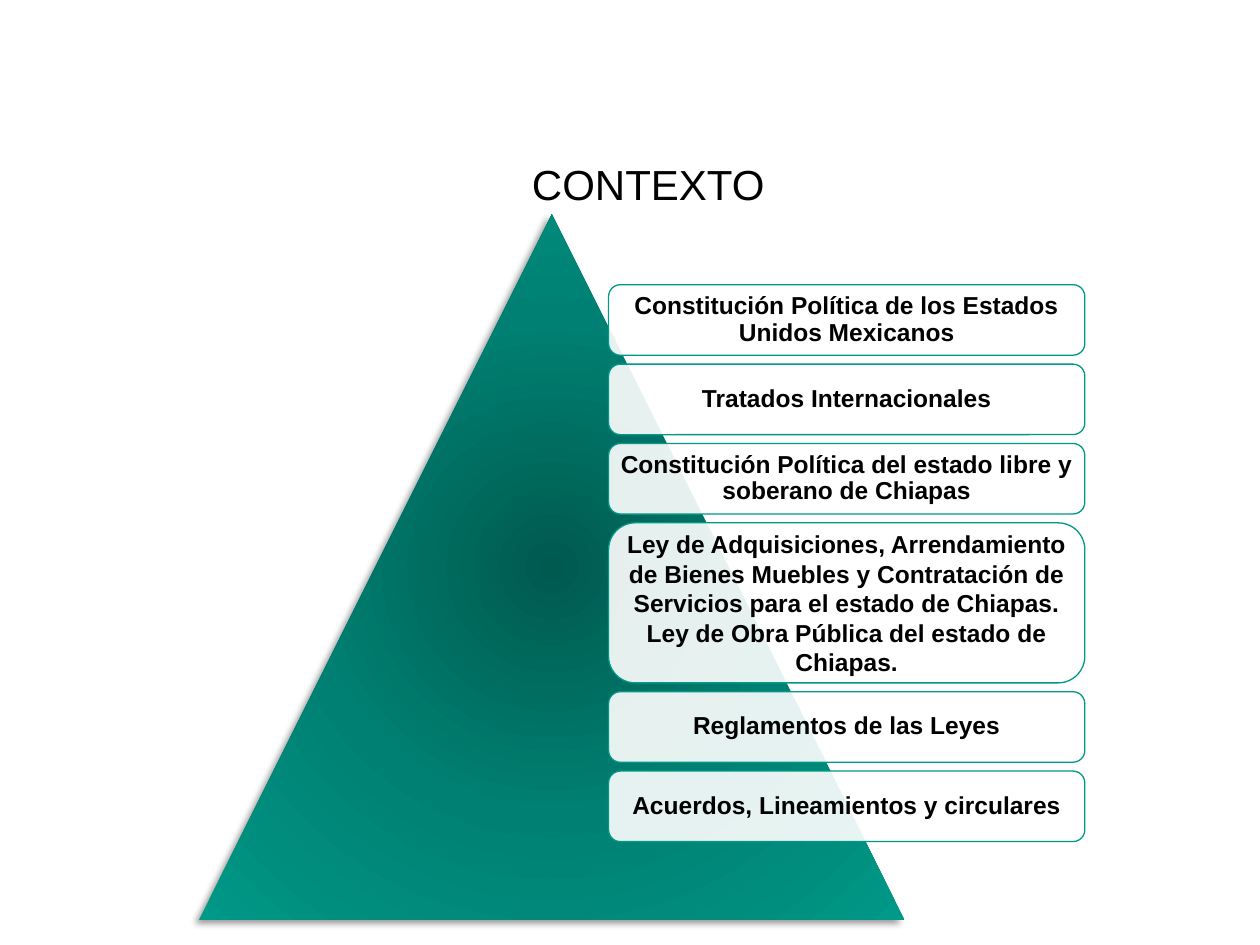
from lxml.etree import SubElement
from pptx import Presentation
from pptx.dml.color import RGBColor
from pptx.enum.shapes import MSO_SHAPE as Shape
from pptx.enum.text import MSO_ANCHOR as Anchor, PP_ALIGN as Align
from pptx.oxml.ns import qn
from pptx.util import Inches, Pt

COLORS = {
    "text": "000000",
    "box": "FFFFFF",
    "line": "009887",
    "core": "005A50",
    "middle": "008072",
    "edge": "009887",
    "shadow": "000000",
}

LEVELS = [
    (5.6, ["Constitución Política de los Estados Unidos Mexicanos"]),
    (5.6, ["Tratados Internacionales"]),
    (5.6, ["Constitución Política del estado libre y soberano de Chiapas"]),
    (12.7, [
        "Ley de Adquisiciones, Arrendamiento de Bienes Muebles y "
        "Contratación de Servicios para el estado de Chiapas.",
        "Ley de Obra Pública del estado de Chiapas.",
    ]),
    (5.6, ["Reglamentos de las Leyes"]),
    (5.6, ["Acuerdos, Lineamientos y circulares"]),
]


def add_element(parent, tag, **attributes):
    values = {name: str(value) for name, value in attributes.items()}
    return SubElement(parent, qn(tag), values)


def write_text(frame, lines, size=14, bold=False, spacing=1.0, margin=0.06,
               anchor=Anchor.MIDDLE):
    frame.word_wrap = True
    frame.vertical_anchor = anchor
    frame.margin_left = frame.margin_right = Inches(margin)
    frame.margin_top = frame.margin_bottom = Inches(min(margin, 0.06))
    for index, line in enumerate(lines):
        paragraph = frame.add_paragraph() if index else frame.paragraphs[0]
        paragraph.text = line
        paragraph.alignment = Align.CENTER
        paragraph.line_spacing = spacing
        font = paragraph.font
        font.name, font.size, font.bold = "Arial", Pt(size), bold
        font.color.rgb = RGBColor.from_string(COLORS["text"])


class ContextSlide:
    COLUMNS, ROWS = 100, 75

    def __init__(self, presentation):
        self.column = presentation.slide_width / self.COLUMNS
        self.row = presentation.slide_height / self.ROWS
        self.slide = presentation.slides.add_slide(presentation.slide_layouts[5])

    def place(self, left, top, width, height):
        return [round(value * unit) for value, unit in zip(
            (left, top, width, height), (self.column, self.row) * 2)]

    def title(self, text, *cells):
        title = self.slide.shapes.title
        title.left, title.top, title.width, title.height = self.place(*cells)
        write_text(title.text_frame, [text], size=24, margin=0.1, anchor=Anchor.TOP)

    def shape(self, kind, *cells):
        shape = self.slide.shapes.add_shape(kind, *self.place(*cells))
        shape.shadow.inherit = False
        return shape

    def pyramid(self, *cells):
        shape = self.shape(Shape.ISOSCELES_TRIANGLE, *cells)
        shape.line.fill.background()
        shape.fill.gradient()
        properties = shape.element.spPr
        gradient = properties.find(qn("a:gradFill"))
        gradient.clear()
        stops = add_element(gradient, "a:gsLst")
        for position, name in ((0, "core"), (50, "middle"), (100, "edge")):
            stop = add_element(stops, "a:gs", pos=position * 1000)
            add_element(stop, "a:srgbClr", val=COLORS[name])
        route = add_element(gradient, "a:path", path="circle")
        add_element(route, "a:fillToRect", l=50000, t=50000, r=50000, b=50000)
        shadow = add_element(properties.find(qn("a:effectLst")), "a:outerShdw",
                             blurRad=Pt(4), dist=Pt(3), dir=135 * 60000)
        color = add_element(shadow, "a:srgbClr", val=COLORS["shadow"])
        add_element(color, "a:alpha", val=40000)

    def level(self, lines, *cells):
        shape = self.shape(Shape.ROUNDED_RECTANGLE, *cells)
        shape.fill.solid()
        shape.fill.fore_color.rgb = RGBColor.from_string(COLORS["box"])
        color = shape.element.spPr.find(qn("a:solidFill"))[0]
        add_element(color, "a:alpha", val=90000)
        shape.line.color.rgb = RGBColor.from_string(COLORS["line"])
        shape.line.width = Pt(0.75)
        write_text(shape.text_frame, lines, bold=True,
                   spacing=0.9 if len(lines) == 1 else 1.0)

    def levels(self, levels, left, top, width, gap):
        for height, lines in levels:
            self.level(lines, left, top, width, height)
            top += height + gap


def main():
    presentation = Presentation()
    presentation.slide_width, presentation.slide_height = Inches(10), Inches(7.5)
    context = ContextSlide(presentation)
    context.title("CONTEXTO", 8.1, 12, 86.7, 5)
    context.pyramid(15.8, 17, 56, 56)
    context.levels(LEVELS, left=48.3, top=22.6, width=37.8, gap=0.7)
    presentation.save("out.pptx")


if __name__ == "__main__":
    main()
